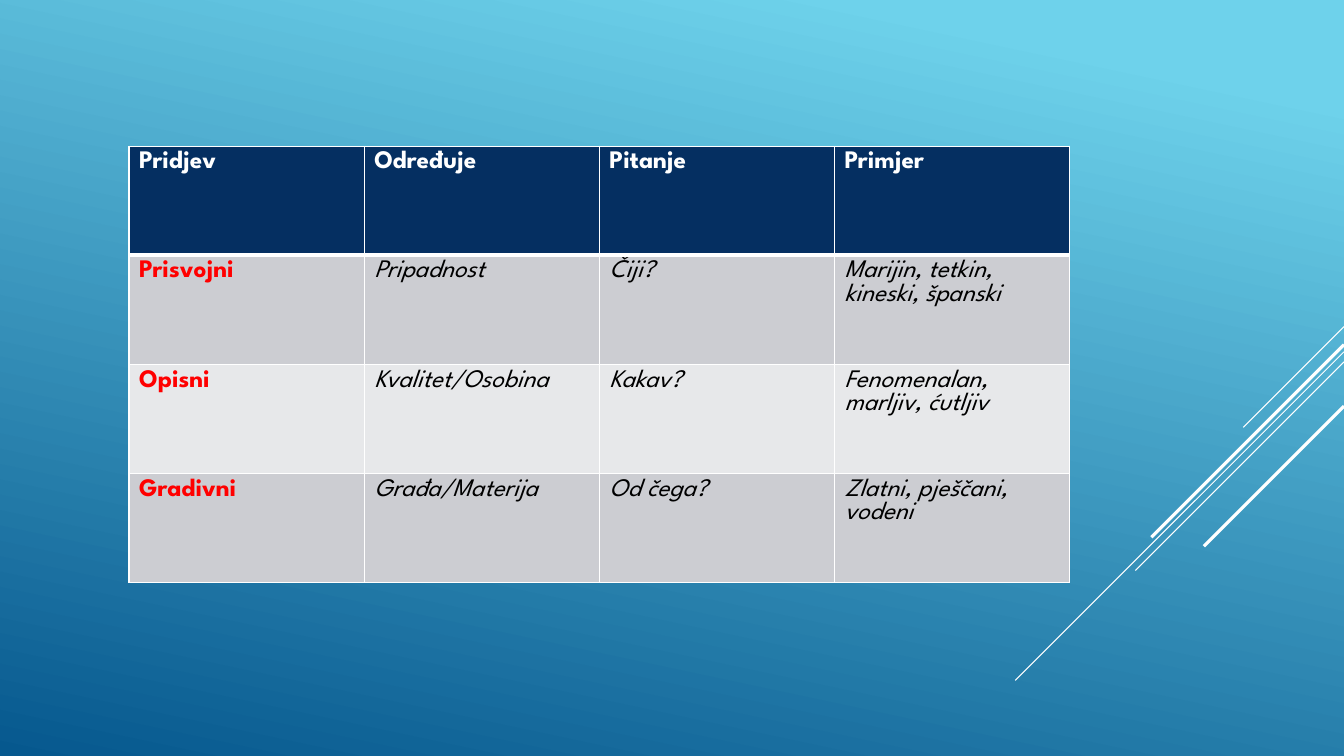
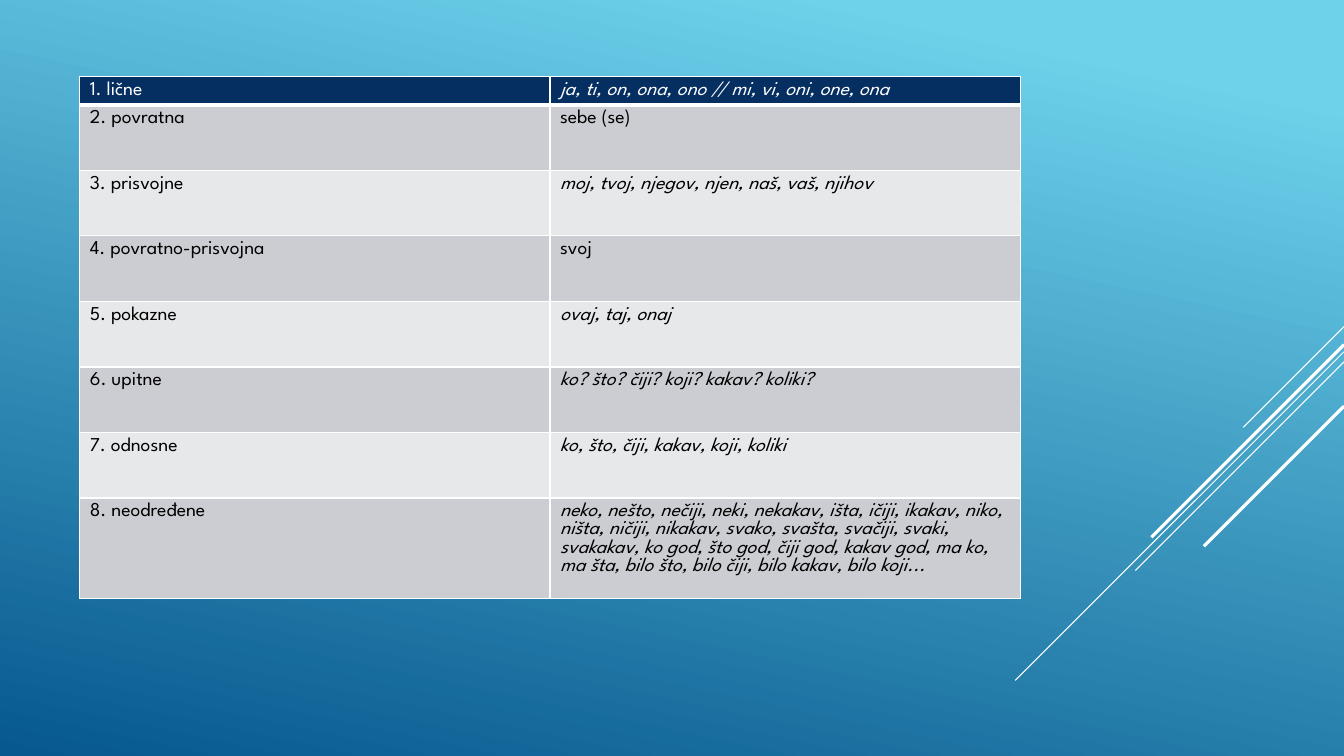
from lxml import etree
from pptx import Presentation
from pptx.dml.color import RGBColor
from pptx.enum.shapes import MSO_CONNECTOR
from pptx.oxml.ns import qn
from pptx.util import Inches, Pt

STRAIGHT = MSO_CONNECTOR.STRAIGHT
FONT = "League Spartan"
SKY = RGBColor(0x6E, 0xD2, 0xEB)
OCEAN = RGBColor(0x06, 0x58, 0x8E)
NAVY = RGBColor(0x05, 0x2F, 0x61)
DARK_BAND = RGBColor(0xCC, 0xCD, 0xD2)
LIGHT_BAND = RGBColor(0xE7, 0xE8, 0xEA)
WHITE = RGBColor(0xFF, 0xFF, 0xFF)
BLACK = RGBColor(0x00, 0x00, 0x00)
RED = RGBColor(0xFF, 0x00, 0x00)

PAGE_WIDTH, PAGE_HEIGHT = 13.33, 7.5
BLANK_LAYOUT = 6
TABLE_WIDTH = 9.33
THIN_BORDER, HEADER_BORDER = 1, 3

# Diagonals from the right edge: top, run to the lower left, line width
STRIPES = [
    (3.24, 1.0, 0.75),
    (3.49, 3.26, 0.75),
    (3.59, 2.07, 0.75),
    (3.42, 1.91, 2.25),
    (4.03, 1.39, 2.25),
]

ADJECTIVES = [
    ("Pridjev", "Određuje", "Pitanje", "Primjer"),
    ("Prisvojni", "Pripadnost", "Čiji?", "Marijin, tetkin, kineski, španski"),
    ("Opisni", "Kvalitet/Osobina", "Kakav?", "Fenomenalan, marljiv, ćutljiv"),
    ("Gradivni", "Građa/Materija", "Od čega?", "Zlatni, pješčani, vodeni"),
]

PRONOUNS = [
    ("1. lične", "ja, ti, on, ona, ono // mi, vi, oni, one, ona"),
    ("2. povratna", "sebe (se)"),
    ("3. prisvojne", "moj, tvoj, njegov, njen, naš, vaš, njihov"),
    ("4. povratno-prisvojna", "svoj"),
    ("5. pokazne", "ovaj, taj, onaj"),
    ("6. upitne", "ko? što? čiji? koji? kakav? koliki?"),
    ("7. odnosne", "ko, što, čiji, kakav, koji, koliki"),
    ("8. neodređene",
     "neko, nešto, nečiji, neki, nekakav, išta, ičiji, ikakav, niko, ništa, "
     "ničiji, nikakav, svako, svašta, svačiji, svaki, svakakav, ko god, "
     "što god, čiji god, kakav god, ma ko, ma šta, bilo što, bilo čiji, "
     "bilo kakav, bilo koji..."),
]
UPRIGHT_PRONOUNS = ("sebe (se)", "svoj")


def paint_background(master):
    fill = master.background.fill
    fill.gradient()
    fill.gradient_angle = 258
    for stop, position, color in zip(fill.gradient_stops, (0.1, 1), (SKY, OCEAN)):
        stop.position = position
        stop.color.rgb = color


def add_page(deck):
    """Add a blank page with the diagonal stripes at its right edge."""
    page = deck.slides.add_slide(deck.slide_layouts[BLANK_LAYOUT])
    for top, run, width in STRIPES:
        stripe = page.shapes.add_connector(
            STRAIGHT, Inches(PAGE_WIDTH), Inches(top),
            Inches(PAGE_WIDTH - run), Inches(top + run))
        stripe.line.color.rgb = WHITE
        stripe.line.width = Pt(width)
        properties = stripe.element.find(qn("p:spPr"))
        etree.SubElement(properties, qn("a:effectLst"))
    return page


def add_border(cell, side, width):
    properties = cell._tc.get_or_add_tcPr()
    border = etree.SubElement(properties, qn(f"a:ln{side}"), w=str(Pt(width)))
    solid = etree.SubElement(border, qn("a:solidFill"))
    etree.SubElement(solid, qn("a:srgbClr"), val=str(WHITE))


def style_cell(cell, row):
    """Give a cell its white borders and the band colour of its row."""
    top = HEADER_BORDER if row == 1 else THIN_BORDER
    bottom = HEADER_BORDER if row == 0 else THIN_BORDER
    for side, width in zip("LRTB", (THIN_BORDER, THIN_BORDER, top, bottom)):
        add_border(cell, side, width)
    cell.fill.solid()
    band = DARK_BAND if row % 2 else LIGHT_BAND
    cell.fill.fore_color.rgb = NAVY if row == 0 else band


def add_banded_table(page, left, top, row_heights, texts, size, text_style):
    """Fill a table; text_style(row, column, text) gives colour, bold, italic."""
    columns = len(texts[0])
    table = page.shapes.add_table(
        len(texts), columns, Inches(left), Inches(top),
        Inches(TABLE_WIDTH), Inches(sum(row_heights))).table
    for column in table.columns:
        column.width = Inches(TABLE_WIDTH / columns)
    for row, (height, row_texts) in enumerate(zip(row_heights, texts)):
        table.rows[row].height = Inches(height)
        for column, text in enumerate(row_texts):
            cell = table.cell(row, column)
            style_cell(cell, row)
            cell.text = text
            font = cell.text_frame.paragraphs[0].font
            font.name = FONT
            font.size = Pt(size)
            font.color.rgb, font.bold, font.italic = text_style(row, column, text)


def adjective_style(row, column, text):
    if row == 0:
        return WHITE, True, False
    return (RED, True, False) if column == 0 else (BLACK, False, True)


def pronoun_style(row, column, text):
    italic = column == 1 and text not in UPRIGHT_PRONOUNS
    return WHITE if row == 0 else BLACK, False, italic


def add_adjectives_page(deck):
    heights = [4.33 / len(ADJECTIVES)] * len(ADJECTIVES)
    add_banded_table(add_page(deck), 1.28, 1.45, heights,
                     ADJECTIVES, 18, adjective_style)


def add_pronouns_page(deck):
    heights = [0.28] + [0.65] * (len(PRONOUNS) - 2) + [1.0]
    add_banded_table(add_page(deck), 0.79, 0.76, heights,
                     PRONOUNS, 14, pronoun_style)


def main():
    deck = Presentation()
    deck.slide_width = Inches(PAGE_WIDTH)
    deck.slide_height = Inches(PAGE_HEIGHT)
    paint_background(deck.slide_master)
    add_adjectives_page(deck)
    add_pronouns_page(deck)
    deck.save("out.pptx")


if __name__ == "__main__":
    main()
